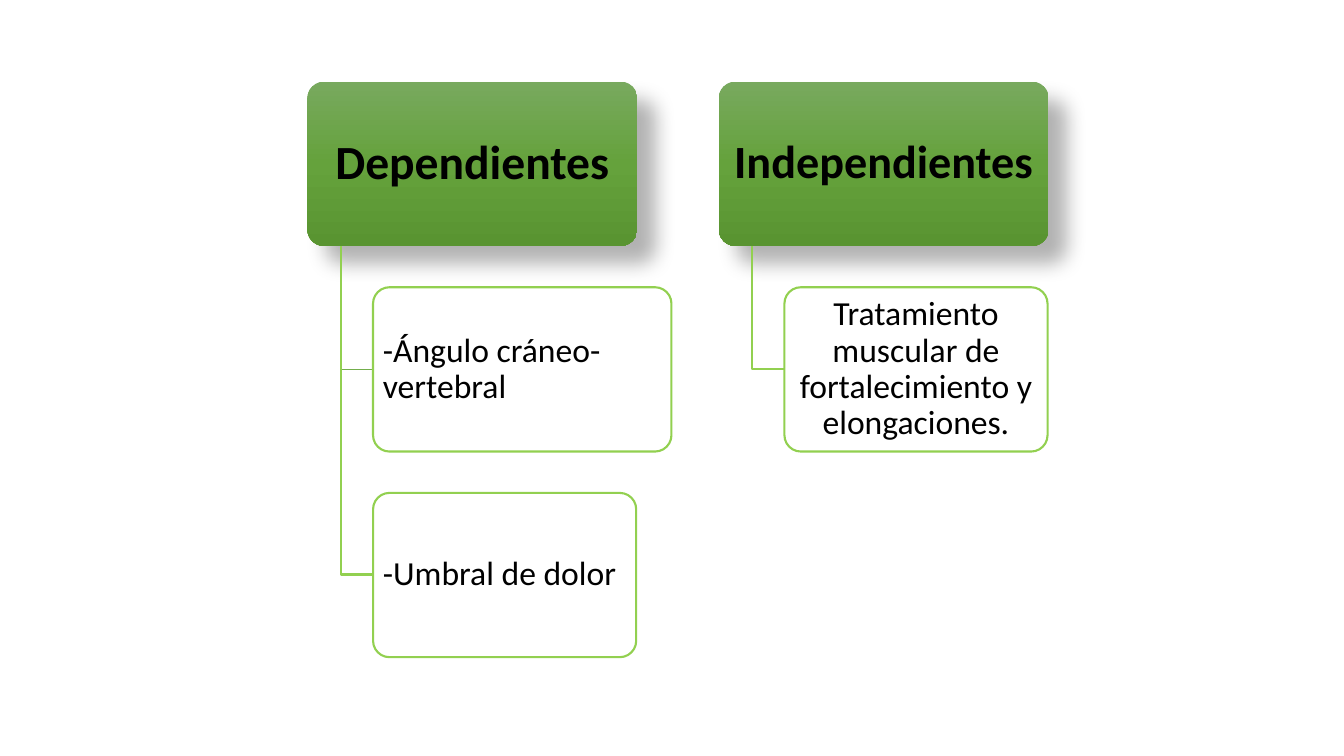
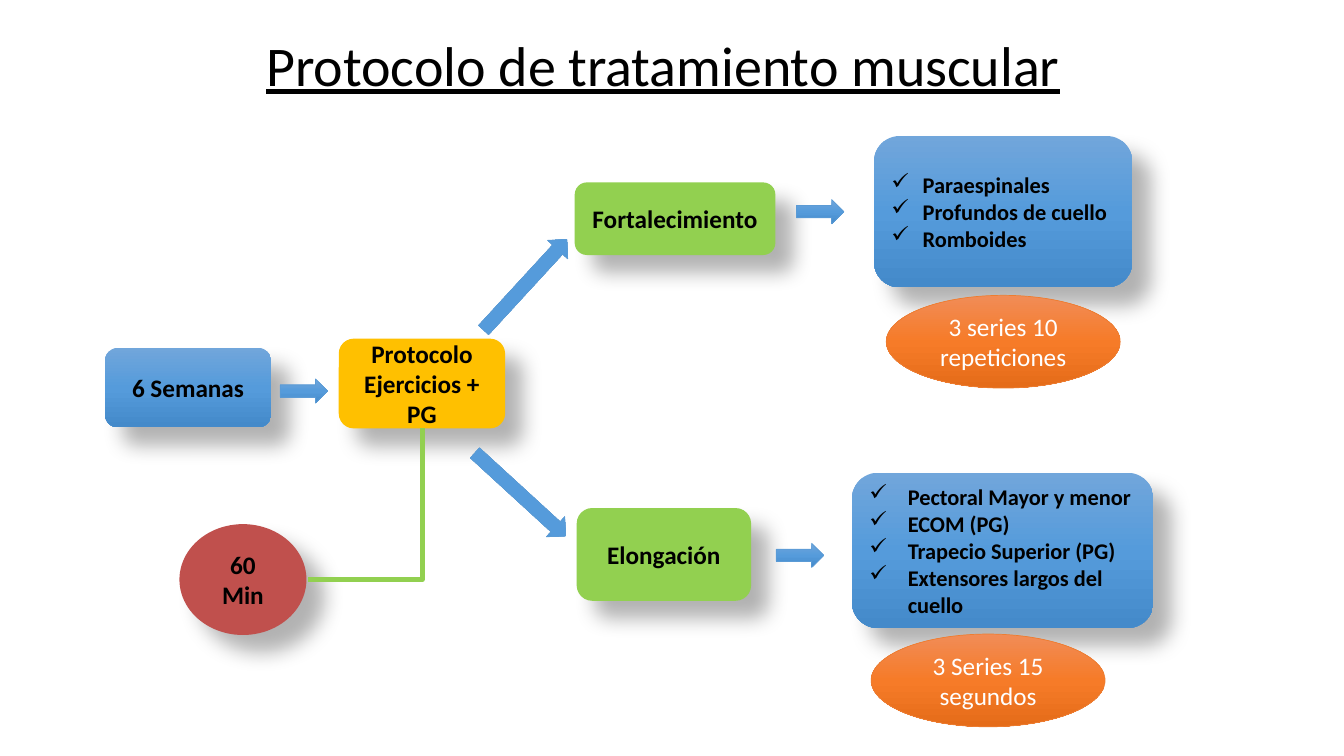
from copy import deepcopy

from lxml import etree
from pptx import Presentation
from pptx.dml.color import RGBColor
from pptx.enum.shapes import MSO_CONNECTOR, MSO_SHAPE
from pptx.enum.text import MSO_ANCHOR, MSO_AUTO_SIZE, PP_ALIGN
from pptx.oxml.ns import qn
from pptx.util import Pt

PX = 9144
FONT = "Calibri"
ROUNDED = MSO_SHAPE.ROUNDED_RECTANGLE
OVAL = MSO_SHAPE.OVAL
ARROW = MSO_SHAPE.RIGHT_ARROW
ELBOW = MSO_CONNECTOR.ELBOW
LEFT = PP_ALIGN.LEFT
CENTER = PP_ALIGN.CENTER
TOP = MSO_ANCHOR.TOP
MIDDLE = MSO_ANCHOR.MIDDLE
NO_FIT = MSO_AUTO_SIZE.NONE

BLACK = "000000"
WHITE = "FFFFFF"
LIME = "92D050"
AMBER = "FFC000"
RED = "C0504D"
LEAF = ("78A95E", "65A23C", "599431")
BLUE = ("71A6DB", "559BDB", "448ACA")
ORANGE = ("F18C57", "F67B28", "E56C19")
BLUE_EDGE = "5B9BD5"
ORANGE_EDGE = "ED7D31"


def add_block(page, kind, at, fill, edge=None, edge_width=0.5, shadow=False):
    shape = page.shapes.add_shape(kind, *(value * PX for value in at))
    if isinstance(fill, tuple):
        shape.fill.gradient()
        shape.fill.gradient_angle = 270
        stop_list = shape._element.spPr.find(".//" + qn("a:gsLst"))
        stop_list.append(deepcopy(stop_list[0]))
        for stop, colour, position in zip(shape.fill.gradient_stops, fill, (0, 0.5, 1)):
            stop.color.rgb = RGBColor.from_string(colour)
            stop.position = position
    else:
        shape.fill.solid()
        shape.fill.fore_color.rgb = RGBColor.from_string(fill)
    if edge:
        shape.line.color.rgb = RGBColor.from_string(edge)
        shape.line.width = Pt(edge_width)
    else:
        shape.line.fill.background()
    shape.shadow.inherit = False
    if shadow:
        effects = shape._element.spPr.find(qn("a:effectLst"))
        outer = etree.SubElement(effects, qn("a:outerShdw"), blurRad=str(Pt(15)), dist=str(Pt(18)),
                                 dir="2700000", algn="tl", rotWithShape="0")
        tint = etree.SubElement(outer, qn("a:srgbClr"), val=BLACK)
        etree.SubElement(tint, qn("a:alpha"), val="30000")
    return shape


def write(shape, lines, size, colour=BLACK, bold=False, align=CENTER, anchor=MIDDLE,
          spacing=None, indent=0, underline=False):
    frame = shape.text_frame
    frame.word_wrap = True
    frame.vertical_anchor = anchor
    for index, line in enumerate(lines):
        para = frame.add_paragraph() if index else frame.paragraphs[0]
        para.alignment = align
        para.line_spacing = spacing
        if indent:
            properties = para._p.get_or_add_pPr()
            properties.set("marL", str(indent * PX))
            properties.set("indent", str(-indent * PX))
            etree.SubElement(properties, qn("a:buChar"), char="✓")
        span = para.add_run()
        span.text = line
        span.font.name = FONT
        span.font.size = Pt(size)
        span.font.bold = bold
        span.font.underline = underline
        span.font.color.rgb = RGBColor.from_string(colour)


deck = Presentation()
deck.slide_width = 1333 * PX
deck.slide_height = 750 * PX
title_only = deck.slide_layouts[5]
blank = deck.slide_layouts[6]

page = deck.slides.add_slide(blank)
header_top, header_width, block_height = 81, 327, 163
header_bottom = header_top + block_height
row_step = 204
variables = [
    (305, "Dependientes", 34, [
        ("-Ángulo cráneo-vertebral", 296, LEFT, "73AE4C", 0.5),
        ("-Umbral de dolor", 261, LEFT, LIME, 1.5),
    ]),
    (713, "Independientes", 33, [
        ("Tratamiento muscular de fortalecimiento y elongaciones.", 261, CENTER, LIME, 1.5),
    ]),
]
for left, heading, heading_size, children in variables:
    header = add_block(page, ROUNDED, (left, header_top, header_width, block_height), LEAF, shadow=True)
    header.adjustments[0] = 0.1
    frame = header.text_frame
    frame.margin_left = frame.margin_right = 7 * PX
    frame.margin_top = frame.margin_bottom = 5 * PX
    write(header, [heading], heading_size, bold=True, spacing=0.9)
    trunk_x, child_x = left + 33, left + 65
    for row, (text, width, align, branch_colour, branch_width) in enumerate(children, 1):
        child_top = header_top + row * row_step
        child_middle = child_top + block_height // 2
        outline = page.shapes.build_freeform(trunk_x, header_bottom, PX)
        outline.add_line_segments([(trunk_x, child_middle), (child_x, child_middle)], close=False)
        branch = outline.convert_to_shape()
        branch.fill.background()
        branch.line.color.rgb = RGBColor.from_string(branch_colour)
        branch.line.width = Pt(branch_width)
        branch.shadow.inherit = False
        child = add_block(page, ROUNDED, (child_x, child_top, width, block_height), WHITE, LIME, 1.5)
        child.adjustments[0] = 0.1
        frame = child.text_frame
        frame.margin_left = frame.margin_right = 5 * PX
        frame.margin_top = frame.margin_bottom = 3 * PX
        write(child, [text], 24, align=align, spacing=0.9)

page = deck.slides.add_slide(title_only)
title = page.shapes.title
title.left, title.top, title.width, title.height = (value * PX for value in (254, 25, 842, 145))
title.text_frame.auto_size = NO_FIT
write(title, ["Protocolo de tratamiento muscular"], 40, align=LEFT, anchor=TOP, underline=True)

steps = [
    (ROUNDED, (104, 345, 165, 79), BLUE, "6 Semanas"),
    (ROUNDED, (572, 504, 173, 92), LIME, "Elongación"),
    (ROUNDED, (336, 336, 165, 89), AMBER, "Protocolo Ejercicios + PG"),
    (ROUNDED, (570, 181, 199, 72), LIME, "Fortalecimiento"),
    (OVAL, (178, 520, 126, 110), RED, "60 Min"),
]
for kind, at, fill, text in steps:
    write(add_block(page, kind, at, fill, shadow=True), [text], 18, bold=True)

muscle_lists = [
    ((867, 135, 256, 150), 31, ["Paraespinales", "Profundos de cuello", "Romboides"]),
    ((845, 469, 299, 154), 38, ["Pectoral Mayor y menor", "ECOM (PG)", "Trapecio Superior (PG)",
                                "Extensores largos del cuello"]),
]
for at, indent, muscles in muscle_lists:
    box = add_block(page, ROUNDED, at, BLUE, shadow=True)
    write(box, muscles, 16, bold=True, align=LEFT, indent=indent)

arrows = [
    ((278, 376, 47, 24), 0),
    ((460, 269, 122, 27), 312.6),
    ((770, 539, 47, 24), 0),
    ((455, 477, 122, 27), 42.5),
    ((790, 198, 47, 24), 0),
]
for at, angle in arrows:
    add_block(page, ARROW, at, BLUE, BLUE_EDGE).rotation = angle

duration_link = page.shapes.add_connector(ELBOW, 287 * PX, 443 * PX, 437 * PX, 557 * PX)
duration_link.line.color.rgb = RGBColor.from_string(LIME)
duration_link.line.width = Pt(3)
link_properties = duration_link._element.spPr
link_properties.find(qn("a:xfrm")).set("rot", "5400000")
link_properties.find(qn("a:prstGeom")).set("prst", "bentConnector2")
etree.SubElement(link_properties, qn("a:effectLst"))

doses = [
    ((879, 293, 232, 92), "3 series 10 repeticiones"),
    ((864, 629, 232, 92), "3 Series 15 segundos"),
]
for at, text in doses:
    write(add_block(page, OVAL, at, ORANGE, ORANGE_EDGE), [text], 18, WHITE)

deck.save("out.pptx")
